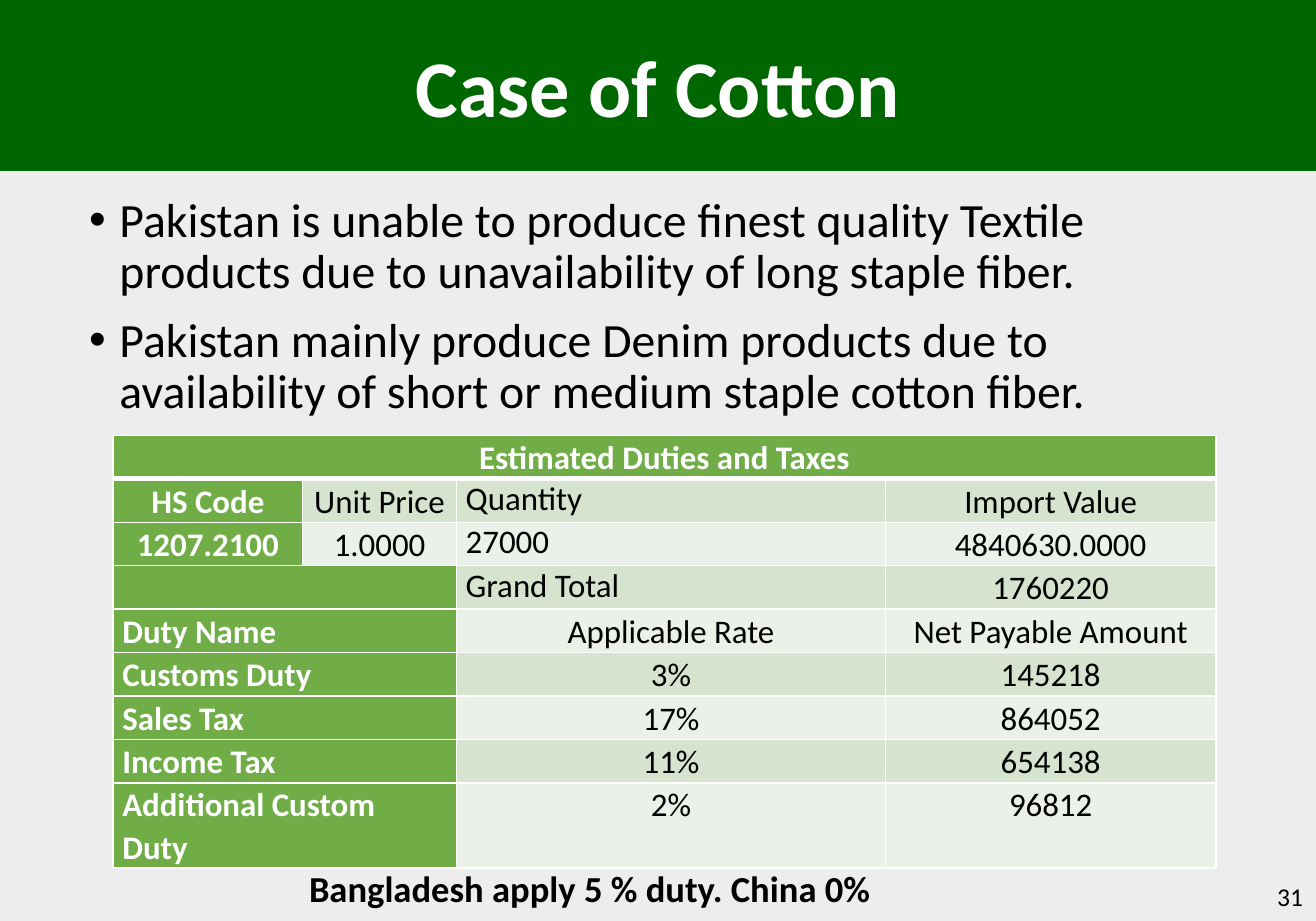
from pptx import Presentation
from pptx.dml.color import RGBColor as Rgb
from pptx.enum.shapes import MSO_SHAPE as Shape
from pptx.enum.text import MSO_ANCHOR as Anchor, PP_ALIGN as Align
from pptx.oxml.ns import qn
from pptx.util import Inches, Pt
from lxml.etree import SubElement as Sub

WIDE, HIGH = Inches(10), Inches(7)
HUE = {"page": "EDEDED", "band": "006600", "head": "70AD47", "dark": "D5E3CF",
       "pale": "EBF1E9", "ink": "000000", "white": "FFFFFF"}
SIDE = {"l": Align.LEFT, "c": Align.CENTER, "r": Align.RIGHT}

POINTS = [
    "Pakistan is unable to produce finest quality Textile products "
    "due to unavailability of long staple fiber.",
    "Pakistan mainly produce Denim products due to availability "
    "of short or medium staple cotton fiber.",
]

# None continues the cell to its left
ROWS = [
    ["Estimated Duties and Taxes", None, None, None],
    ["HS Code", "Unit Price", "Quantity", "Import Value"],
    ["1207.2100", "1.0000", "27000", "4840630.0000"],
    ["", None, "Grand Total", "1760220"],
    ["Duty Name", None, "Applicable Rate", "Net Payable Amount"],
    ["Customs Duty", None, "3%", "145218"],
    ["Sales Tax", None, "17%", "864052"],
    ["Income Tax", None, "11%", "654138"],
    ["Additional Custom Duty", None, "2%", "96812"],
]
COLS = [1.44, 1.17, 3.26, 2.51]
STEP = 0.33


def tint(fill, hue):
    fill.solid()
    fill.fore_color.rgb = Rgb.from_string(HUE[hue])


def area(x, y, w, h):
    """Turn shares of the slide into lengths."""
    return int(x * WIDE), int(y * HIGH), int(w * WIDE), int(h * HIGH)


def bullet(par):
    props = par._p.get_or_add_pPr()
    props.set("marL", str(Inches(0.23)))
    props.set("indent", str(-Inches(0.23)))
    Sub(props, qn("a:buFont"), typeface="Arial")
    Sub(props, qn("a:buChar"), char="•")


def write(frame, *lines, size=18, hue="ink", bold=False, side="l",
          lead=1.0, gap=0, dots=False):
    frame.word_wrap = True
    for i, line in enumerate(lines):
        par = frame.add_paragraph() if i else frame.paragraphs[0]
        par.alignment, par.line_spacing = SIDE[side], lead
        par.space_before = Pt(gap if i else 0)
        if dots:
            bullet(par)
        font = par.font
        if line:
            run = par.add_run()
            run.text = line
            font = run.font
        font.name, font.size, font.bold = "Calibri", Pt(size), bold
        font.color.rgb = Rgb.from_string(HUE[hue])


def label(slide, spot, *lines, anchor=Anchor.TOP, **form):
    frame = slide.shapes.add_textbox(*area(*spot)).text_frame
    frame.vertical_anchor = anchor
    write(frame, *lines, **form)


def banner(slide, text):
    box = slide.shapes.add_shape(Shape.RECTANGLE, *area(0, 0, 1, 1.3 / 7))
    box.shadow.inherit = False
    tint(box.fill, "band")
    box.line.fill.background()
    box.text_frame.vertical_anchor = Anchor.MIDDLE
    write(box.text_frame, text, size=44, hue="white", bold=True, side="c")


def border(cell, base):
    props = cell._tc.get_or_add_tcPr()
    for edge in "LRTB":
        line = Sub(props, qn("a:ln" + edge), w=str(Pt(base if edge == "B" else 1)))
        Sub(Sub(line, qn("a:solidFill")), qn("a:srgbClr"), val=HUE["white"])


def align(row, col):
    """Duty names and the upper third column sit left."""
    left = row > 3 and col == 0 or 0 < row < 4 and col == 2
    return "l" if left else "c"


def duties(slide):
    count = len(ROWS)
    spot = area(0.086, 3.31 / 7, sum(COLS) / 10, STEP * (count + 1) / 7)
    table = slide.shapes.add_table(count, len(COLS), *spot).table
    table.first_row = table.horz_banding = False
    for col, width in zip(table.columns, COLS):
        col.width = Inches(width)
    for row in table.rows:
        row.height = Inches(STEP)
    table.rows[count - 1].height = Inches(2 * STEP - 0.01)

    for r, row in enumerate(ROWS):
        for c, text in enumerate(row):
            cell = table.cell(r, c)
            head = r == 0 or c == 0 or text is None
            cell.margin_left = cell.margin_right = Inches(0.07)
            cell.margin_top = cell.margin_bottom = 0
            border(cell, 1 if r else 3)
            tint(cell.fill, "head" if head else "dark" if r % 2 else "pale")
            side = align(r, c)
            plain = side == "l" and not head
            write(cell.text_frame, text or "", hue="white" if head else "ink",
                  bold=head, side=side, lead=1.0 if plain else 1.07)
        # Join each run of continued cells
        for c in range(len(row)):
            end = c
            while end + 1 < len(row) and row[end + 1] is None:
                end += 1
            if row[c] is not None and end > c:
                table.cell(r, c).merge(table.cell(r, end))


def main():
    deck = Presentation()
    deck.slide_width, deck.slide_height = WIDE, HIGH
    slide = deck.slides.add_slide(deck.slide_layouts[6])
    tint(slide.background.fill, "page")

    # Points and page number
    label(slide, (0.058, 1.44 / 7, 0.894, 2.06 / 7), *POINTS,
          size=26.1, lead=0.9, gap=9.3, dots=True)
    label(slide, (0.775, 6.63 / 7, 0.225, 0.37 / 7), "31",
          size=14, side="r", anchor=Anchor.MIDDLE)

    # Title, table and closing note
    banner(slide, "Case of Cotton")
    duties(slide)
    label(slide, (0.225, 6.53 / 7, 0.56, 0.44 / 7),
          "Bangladesh apply 5 % duty. China 0%", size=20, bold=True)
    deck.save("out.pptx")


if __name__ == "__main__":
    main()
